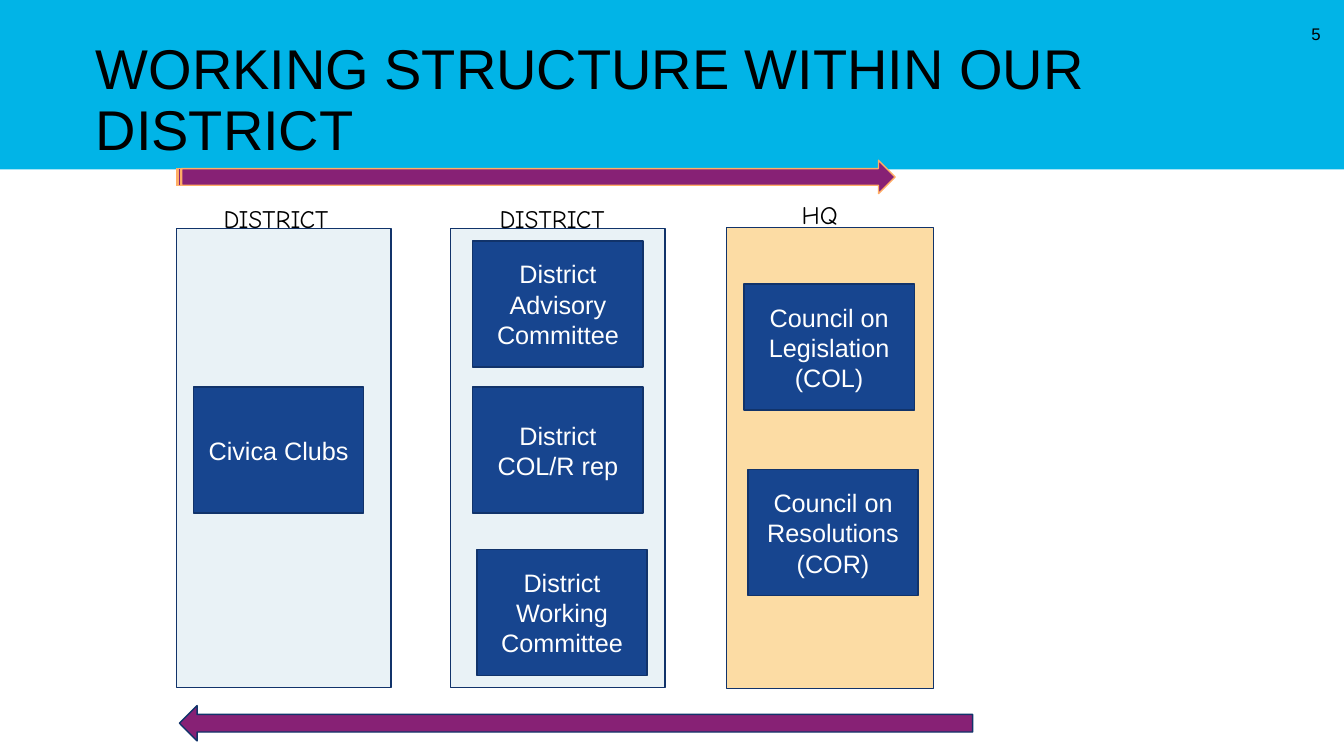
from pptx import Presentation
from pptx.dml.color import RGBColor
from pptx.enum.shapes import MSO_SHAPE as SHAPE
from pptx.enum.text import MSO_ANCHOR as ANCHOR, MSO_AUTO_SIZE as AUTO, PP_ALIGN as ALIGN
from pptx.util import Pt

# Content
TITLE = "WORKING STRUCTURE WITHIN OUR DISTRICT"
PAGE = "5"
COLORS = {"band": "01B4E7", "pale": "E9F2F6", "sand": "FCDCA4", "blue": "17458F",
          "navy": "11336A", "purple": "872175", "orange": "FFAD66",
          "white": "FFFFFF", "black": "000000"}
BOX_W, BOX_H = 121.7, 90

# Columns: label, label (left, top, indent), panel (left, top, width, height),
# fill, boxes as (text, left, top)
COLUMNS = [
    ("DISTRICT", (152.6, 141.8, 0), (126, 163.4, 153.4, 327.6), "pale",
     [("Civica Clubs", 138.2, 276.5)]),
    ("DISTRICT", (349.9, 141.8, 0), (321.8, 163.4, 153.4, 327.6), "pale",
     [("District Advisory Committee", 337.7, 172.1),
      ("District COL/R rep", 337.7, 276.5),
      ("District Working Committee", 340.6, 392.4)]),
    ("HQ", (541.4, 139, 24), (519.1, 162.7, 147.6, 329), "sand",
     [("Council on Legislation (COL)", 531.4, 203),
      ("Council on Resolutions (COR)", 534.2, 335.5)]),
]

# Arrows: shape, (left, top, width, height), line colour
ARROWS = [
    (SHAPE.STRIPED_RIGHT_ARROW, (126, 114.5, 513.4, 23.8), "orange"),
    (SHAPE.LEFT_ARROW, (128.2, 504, 566.6, 25.2), "navy"),
]


def color(name):
    return RGBColor.from_string(COLORS[name])


def add_shape(kind, place, fill, line=None):
    sp = s.shapes.add_shape(kind, *map(Pt, place))
    sp.shadow.inherit = False
    sp.fill.solid()
    sp.fill.fore_color.rgb = color(fill)
    if line:
        sp.line.color.rgb = color(line)
        sp.line.width = Pt(1)
    else:
        sp.line.fill.background()
    return sp


def write(sp, text, size, ink="black", font="Arial", align=ALIGN.LEFT, anchor=ANCHOR.TOP):
    tf = sp.text_frame
    tf.word_wrap = True
    tf.auto_size = AUTO.NONE
    tf.vertical_anchor = anchor
    p = tf.paragraphs[0]
    p.alignment = align
    r = p.add_run()
    r.text = text
    r.font.size = Pt(size)
    r.font.name = font
    r.font.color.rgb = color(ink)
    return p


prs = Presentation()
prs.slide_width, prs.slide_height = Pt(960), Pt(540)
s = prs.slides.add_slide(prs.slide_layouts[5])

# Header band, sent behind the title
band = add_shape(SHAPE.RECTANGLE, (0, 0, 960, 121), "band")
s.shapes._spTree.insert(2, band._element)

# Title and page number
title = s.shapes.title
title.left, title.top, title.width, title.height = map(Pt, (61.2, 18.7, 828, 104.4))
p = write(title, TITLE, 40, anchor=ANCHOR.BOTTOM)
p.line_spacing = 0.9
tf = title.text_frame
tf.margin_left = tf.margin_right = tf.margin_bottom = Pt(7.2)
tf.margin_top = 0
number = s.shapes.add_textbox(*map(Pt, (917.3, 9.4, 33.1, 28.8)))
write(number, PAGE, 12, align=ALIGN.RIGHT, anchor=ANCHOR.MIDDLE)

# Columns with their boxes and labels
for label, (left, top, indent), panel, fill, boxes in COLUMNS:
    add_shape(SHAPE.RECTANGLE, panel, fill, "navy")
    for text, x, y in boxes:
        box = add_shape(SHAPE.RECTANGLE, (x, y, BOX_W, BOX_H), "blue", "navy")
        write(box, text, 18, "white", align=ALIGN.CENTER, anchor=ANCHOR.MIDDLE)
    heading = s.shapes.add_textbox(*map(Pt, (left, top, 115.2, 28.8)))
    write(heading, label, 18, font="Comic Neue")
    heading.text_frame.margin_left = Pt(7.2 + indent)

# Arrows above and below the columns
for kind, place, line in ARROWS:
    add_shape(kind, place, "purple", line)

prs.save("out.pptx")
